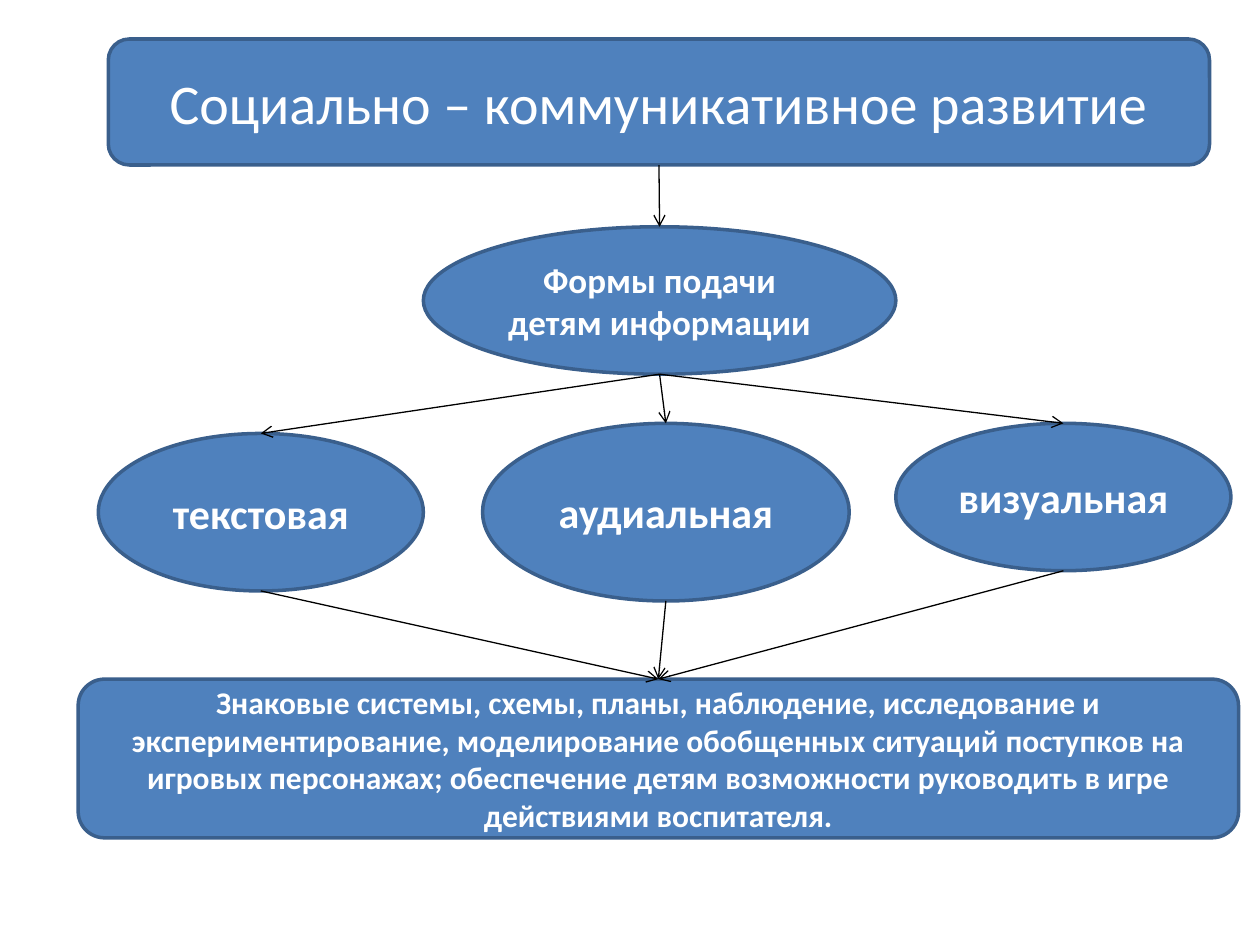
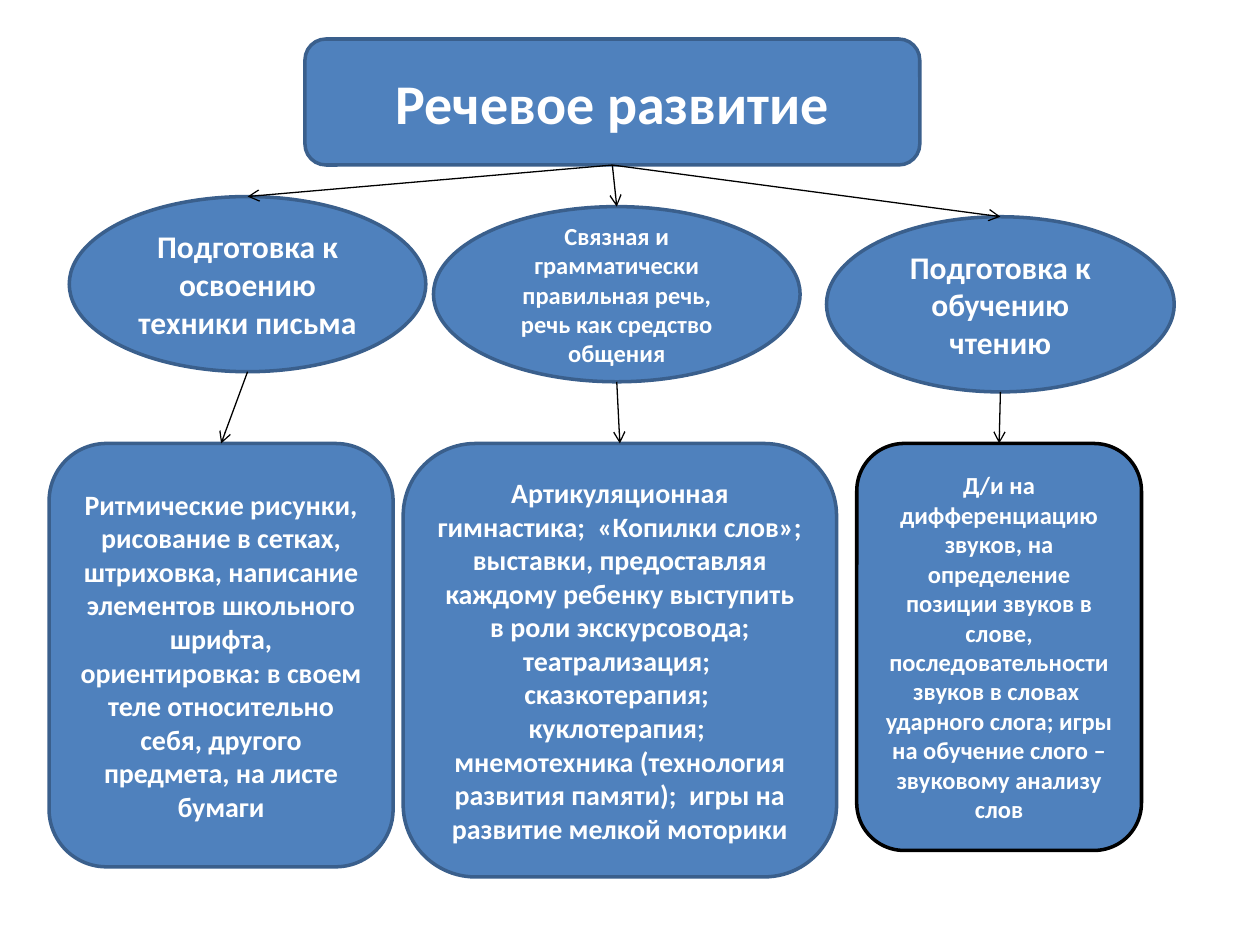
from collections import namedtuple

from lxml import etree
from pptx import Presentation
from pptx.dml.color import RGBColor
from pptx.enum.shapes import MSO_CONNECTOR as Connector, MSO_SHAPE as Preset
from pptx.enum.text import MSO_ANCHOR as Anchor, PP_ALIGN as Align
from pptx.oxml.ns import qn
from pptx.util import Inches, Pt

BLUE = RGBColor(0x4F, 0x81, 0xBD)
EDGE = RGBColor(0x3A, 0x5F, 0x8C)
WHITE = RGBColor(0xFF, 0xFF, 0xFF)
BLACK = RGBColor(0, 0, 0)

FONT = "Calibri"
TITLE_TOP, TITLE_HEIGHT, TITLE_SIZE = 0.31, 1, 32
ROUND, OVAL = Preset.ROUNDED_RECTANGLE, Preset.OVAL

Box = namedtuple("Box", "left top width height")
Node = namedtuple("Node", "box text size edge", defaults=[EDGE])


def top_of(box):
    """Return the middle of the upper edge."""
    return box.left + box.width / 2, box.top


def bottom_of(box):
    """Return the middle of the lower edge."""
    return box.left + box.width / 2, box.top + box.height


def add_node(page, preset, node, bold=True):
    """Draw a filled shape with centred text and return its box."""
    shape = page.shapes.add_shape(preset, *map(Inches, node.box))
    shape.shadow.inherit = False
    shape.fill.solid()
    shape.fill.fore_color.rgb = BLUE
    shape.line.color.rgb = node.edge
    shape.line.width = Pt(2)
    frame = shape.text_frame
    for name, value in {"word_wrap": True, "vertical_anchor": Anchor.MIDDLE}.items():
        setattr(frame, name, value)
    para = frame.paragraphs[0]
    para.alignment = Align.CENTER
    span = para.add_run()
    span.text = node.text
    span.font.color.rgb = WHITE
    for name, value in {"name": FONT, "size": Pt(node.size), "bold": bold}.items():
        setattr(span.font, name, value)
    return node.box


def add_title(page, left, width, text, bold=True):
    """Draw the heading block and return its box."""
    box = Box(left, TITLE_TOP, width, TITLE_HEIGHT)
    return add_node(page, ROUND, Node(box, text, TITLE_SIZE), bold)


def add_row(page, preset, top, nodes):
    """Draw nodes whose tops are measured from the row and return their boxes."""
    return [
        add_node(page, preset, node._replace(box=node.box._replace(top=top + node.box.top)))
        for node in nodes
    ]


def add_arrow(page, upper, lower):
    """Draw an arrow from the bottom of one box to the top of another."""
    ends = (*bottom_of(upper), *top_of(lower))
    arrow = page.shapes.add_connector(Connector.STRAIGHT, *map(Inches, ends))
    arrow.line.color.rgb = BLACK
    arrow.line.width = Pt(0.75)
    outline = arrow.line._get_or_add_ln()
    etree.SubElement(outline, qn("a:tailEnd"), type="arrow")
    etree.SubElement(arrow._element.spPr, qn("a:effectLst"))


def build_social_page(page):
    """Build the scheme of social and communicative development."""
    title = add_title(page, 0.86, 8.74, "Социально – коммуникативное развитие", bold=False)
    forms = add_node(page, OVAL, Node(
        Box(3.36, 1.8, 3.75, 1.17), "Формы подачи детям информации", 20))
    kinds = add_row(page, OVAL, 3.36, [
        Node(Box(0.78, 0.08, 2.58, 1.25), "текстовая", 24),
        Node(Box(3.83, 0, 2.91, 1.41), "аудиальная", 24),
        Node(Box(7.11, 0, 2.66, 1.17), "визуальная", 24),
    ])
    methods = add_node(page, ROUND, Node(
        Box(0.62, 5.39, 9.21, 1.26),
        "Знаковые системы, схемы, планы, наблюдение, исследование и "
        "экспериментирование, моделирование обобщенных ситуаций поступков на "
        "игровых персонажах; обеспечение детям возможности руководить в игре "
        "действиями воспитателя.", 18))
    add_arrow(page, title, forms)
    for kind in kinds:
        add_arrow(page, forms, kind)
        add_arrow(page, kind, methods)


def build_speech_page(page):
    """Build the scheme of speech development."""
    title = add_title(page, 2.42, 4.88, "Речевое развитие")
    goals = add_row(page, OVAL, 1.56, [
        Node(Box(0.55, 0, 2.83, 1.39), "Подготовка к освоению техники письма", 18),
        Node(Box(3.44, 0.08, 2.91, 1.39),
             "Связная и грамматически правильная речь, речь как средство общения", 14),
        Node(Box(6.56, 0.16, 2.76, 1.39), "Подготовка к обучению чтению", 18),
    ])
    methods = add_row(page, ROUND, 3.52, [
        Node(Box(0.39, 0, 2.73, 3.36),
             "Ритмические рисунки, рисование в сетках, штриховка, написание "
             "элементов школьного шрифта, ориентировка: в своем теле "
             "относительно себя, другого предмета, на листе бумаги", 16),
        Node(Box(3.2, 0, 3.44, 3.44),
             "Артикуляционная гимнастика;  «Копилки слов»; выставки, "
             "предоставляя каждому ребенку выступить в роли экскурсовода; "
             "театрализация;  сказкотерапия;  куклотерапия;  мнемотехника "
             "(технология развития памяти);  игры на развитие мелкой моторики", 16),
        Node(Box(6.8, 0, 2.26, 3.23),
             "Д/и на дифференциацию звуков, на определение позиции звуков в "
             "слове, последовательности звуков в словах  ударного слога; игры "
             "на обучение слого – звуковому анализу слов", 14, BLACK),
    ])
    for goal, method in zip(goals, methods):
        add_arrow(page, title, goal)
        add_arrow(page, goal, method)


def main():
    """Build both pages and save the deck."""
    deck = Presentation()
    deck.slide_width, deck.slide_height = Inches(10), Inches(7.5)
    for build in (build_social_page, build_speech_page):
        build(deck.slides.add_slide(deck.slide_layouts[6]))
    deck.save("out.pptx")


if __name__ == "__main__":
    main()
